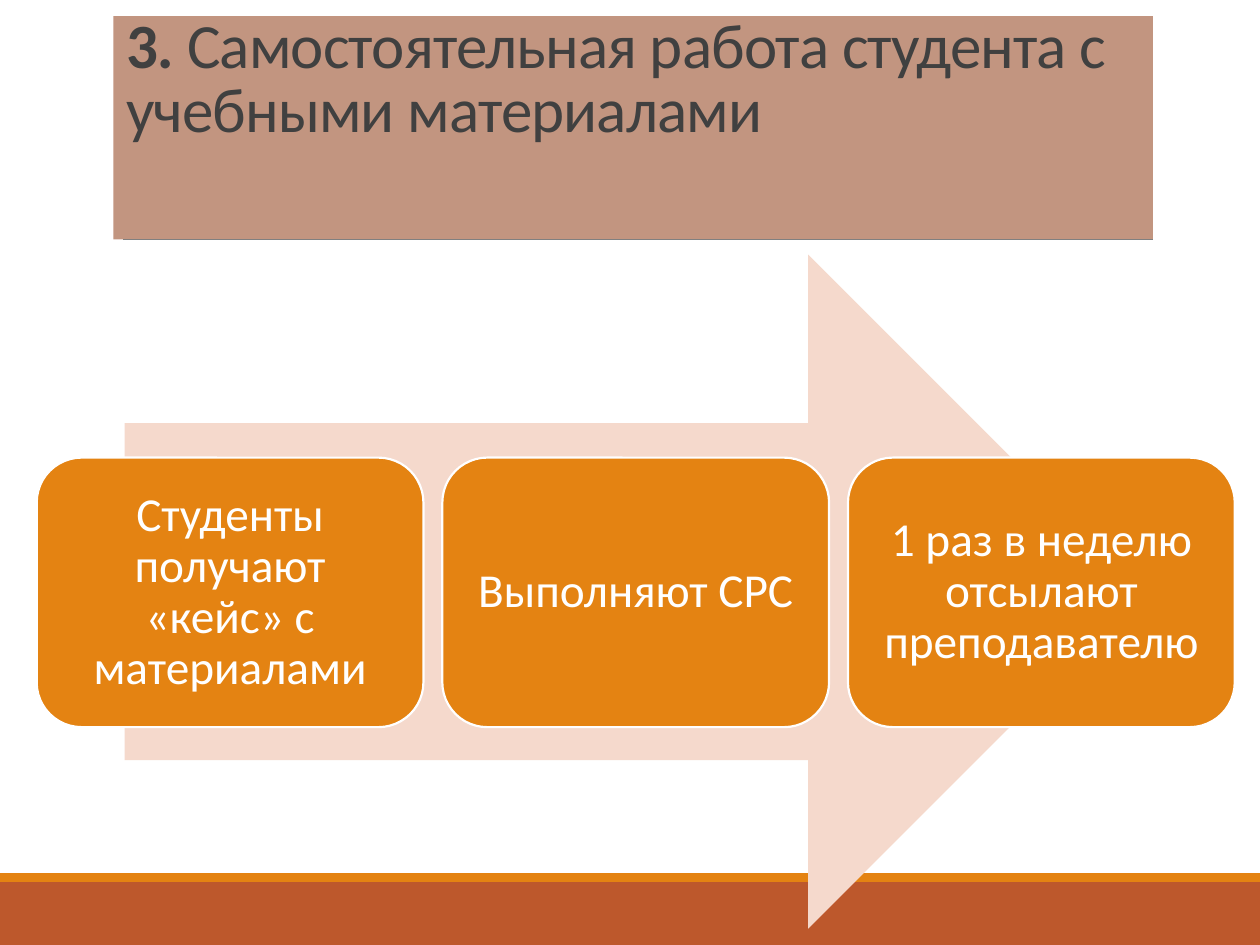
import pptx
import pptx.util
import pptx.dml.color
import pptx.enum.shapes
import pptx.enum.text
import pptx.oxml.ns
import lxml.etree

Pt = pptx.util.Pt
RGBColor = pptx.dml.color.RGBColor
SHAPE = pptx.enum.shapes.MSO_SHAPE
ALIGN = pptx.enum.text.PP_ALIGN
ANCHOR = pptx.enum.text.MSO_ANCHOR

# Content
TITLE_RUNS = [
    ("3. ", True),
    ("Самостоятельная работа студента с учебными материалами", False),
]
STEPS = [
    "Студенты получают «кейс» с материалами",
    "Выполняют СРС",
    "1 раз в неделю отсылают преподавателю",
]

# Colours and measures
RUST = RGBColor(0xBD, 0x58, 0x2C)
ORANGE = RGBColor(0xE4, 0x83, 0x12)
CLAY = RGBColor(0xC2, 0x95, 0x80)
PEACH = RGBColor(0xF5, 0xD9, 0xCC)
GREY = RGBColor(0x80, 0x80, 0x80)
DARK = RGBColor(0x40, 0x40, 0x40)
WHITE = RGBColor(0xFF, 0xFF, 0xFF)
FONT = "Calibri"
WIDTH, HEIGHT = 720, 540
STEP_LEFT, STEP_TOP, STEP_WIDTH, STEP_HEIGHT, STEP_GAP = 21, 261.5, 221, 154, 10.8


def add_block(slide, kind, box, fill):
    block = slide.shapes.add_shape(kind, *map(Pt, box))
    block.shadow.inherit = False
    block.fill.solid()
    block.fill.fore_color.rgb = fill
    block.line.fill.background()
    return block


def style_paragraph(paragraph, size, color, align, spacing):
    paragraph.alignment = align
    paragraph.line_spacing = spacing
    paragraph.font.name = FONT
    paragraph.font.size = Pt(size)
    paragraph.font.color.rgb = color


def add_title(slide):
    title = slide.shapes.title
    title.left, title.top, title.width, title.height = map(Pt, (64.8, 9.2, 594, 127.6))
    title.fill.solid()
    title.fill.fore_color.rgb = CLAY
    frame = title.text_frame
    frame.auto_size = pptx.enum.text.MSO_AUTO_SIZE.NONE
    frame.word_wrap = True
    frame.vertical_anchor = ANCHOR.TOP
    frame.margin_top = Pt(0.5)
    paragraph = frame.paragraphs[0]
    style_paragraph(paragraph, 36, DARK, ALIGN.LEFT, 0.85)
    for text, bold in TITLE_RUNS:
        run = paragraph.add_run()
        run.text = text
        run.font.bold = bold
        # Slightly tightened letter spacing
        run._r.get_or_add_rPr().set("spc", "-50")


def add_step(slide, index, text):
    left = STEP_LEFT + index * (STEP_WIDTH + STEP_GAP)
    step = add_block(slide, SHAPE.ROUNDED_RECTANGLE,
                     (left, STEP_TOP, STEP_WIDTH, STEP_HEIGHT), ORANGE)
    step.line.color.rgb = WHITE
    step.line.width = Pt(1.25)
    frame = step.text_frame
    frame.word_wrap = True
    frame.vertical_anchor = ANCHOR.MIDDLE
    frame.margin_left = frame.margin_right = Pt(8)
    frame.margin_top = frame.margin_bottom = Pt(8)
    frame.text = text
    style_paragraph(frame.paragraphs[0], 27, WHITE, ALIGN.CENTER, 0.9)


def main():
    deck = pptx.Presentation()
    deck.slide_width, deck.slide_height = Pt(WIDTH), Pt(HEIGHT)
    slide = deck.slides.add_slide(deck.slide_layouts[5])

    # Footer bands
    add_block(slide, SHAPE.RECTANGLE, (0, 504, WIDTH, 36), RUST)
    add_block(slide, SHAPE.RECTANGLE, (0, 499, WIDTH, 5), ORANGE)

    # Title and the rule beneath it
    add_title(slide)
    rule = slide.shapes.add_connector(pptx.enum.shapes.MSO_CONNECTOR.STRAIGHT,
                                      Pt(70.5), Pt(136.8), Pt(658.8), Pt(136.8))
    rule.line.color.rgb = GREY
    rule.line.width = Pt(0.5)
    lxml.etree.SubElement(rule._element.spPr, pptx.oxml.ns.qn("a:effectLst"))

    # Process arrow with its steps
    add_block(slide, SHAPE.RIGHT_ARROW, (71.3, 145.5, 583.2, 385.2), PEACH)
    for index, text in enumerate(STEPS):
        add_step(slide, index, text)

    deck.save("out.pptx")


if __name__ == "__main__":
    main()
